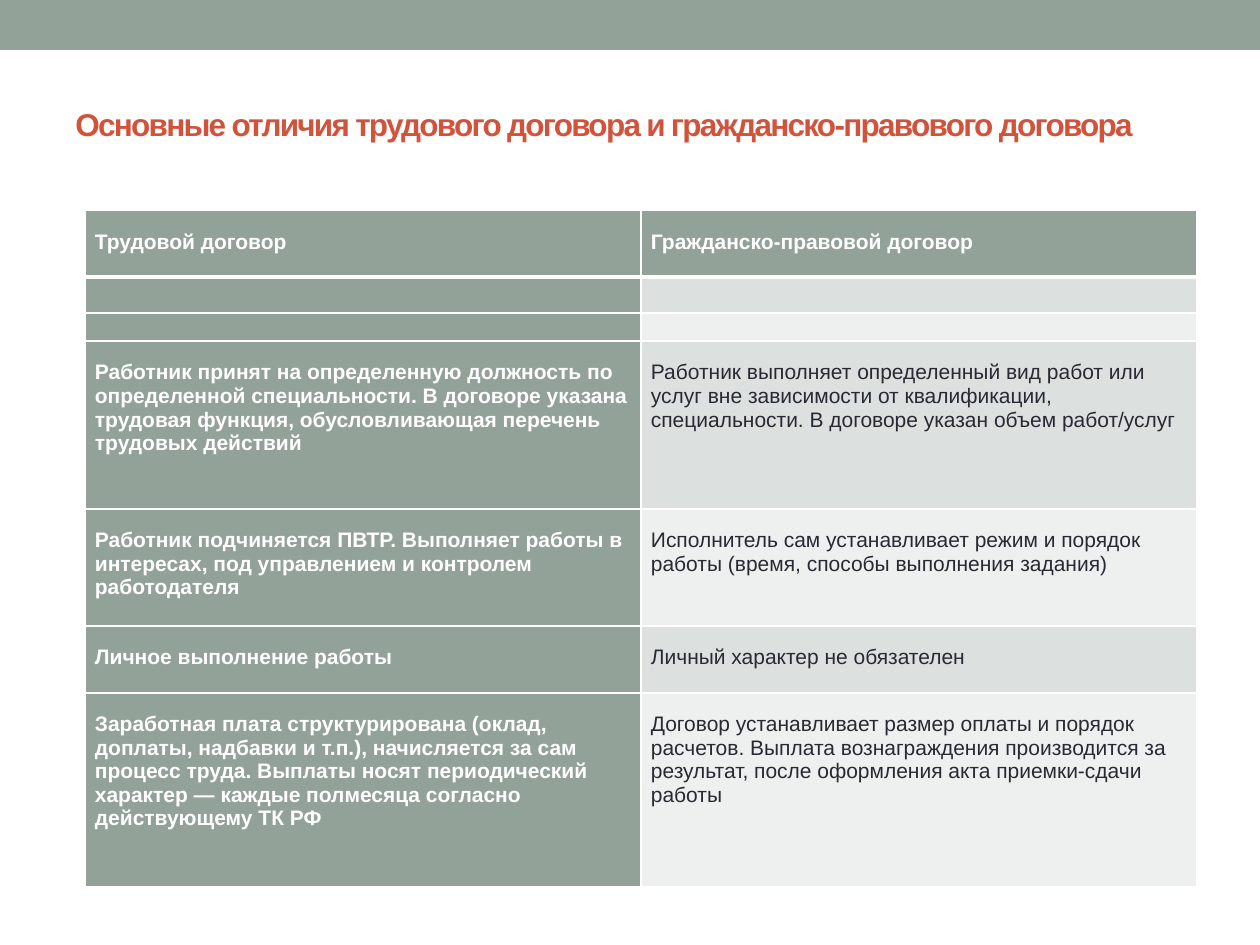
from lxml import etree
from pptx import Presentation
from pptx import util as u
from pptx.dml.color import RGBColor
from pptx.enum import shapes, text
from pptx.oxml import ns

PX = u.Inches(1) // 126
COLORS = {"sage": "93A299", "red": "D2533C", "white": "FFFFFF",
          "ink": "292934", "band_dark": "DCE0DE", "band_light": "EEF0EF"}


def write(frame, words, size=12, color="ink", bold=False, spacing=None):
    frame.word_wrap = True
    paragraph = frame.paragraphs[0]
    paragraph.alignment = text.PP_ALIGN.LEFT
    run = paragraph.add_run()
    run.text = words
    run.font.name = "Arial"
    run.font.size = u.Pt(size)
    run.font.bold = bold
    run.font.color.rgb = RGBColor.from_string(COLORS[color])
    if spacing is not None:
        run.font._element.set("spc", str(spacing * 100))


def add_border(cell, side, points):
    properties = cell._tc.get_or_add_tcPr()
    line = etree.SubElement(properties, ns.qn(f"a:ln{side}"), w=str(u.Pt(points)))
    fill = etree.SubElement(line, ns.qn("a:solidFill"))
    etree.SubElement(fill, ns.qn("a:srgbClr"), val=COLORS["white"])


presentation = Presentation()
presentation.slide_width = 1260 * PX
presentation.slide_height = 945 * PX
slide = presentation.slides.add_slide(presentation.slide_layouts[6])

# Top band
band = slide.shapes.add_shape(shapes.MSO_SHAPE.RECTANGLE, 0, 0, 1260 * PX, 50 * PX)
band.shadow.inherit = False
band.fill.solid()
band.fill.fore_color.rgb = RGBColor.from_string(COLORS["sage"])
band.line.fill.background()

# Title, set slightly above the middle of its box
title = slide.shapes.add_textbox(63 * PX, 73 * PX, 1134 * PX, 136 * PX)
title.text_frame.vertical_anchor = text.MSO_ANCHOR.MIDDLE
title.text_frame.margin_bottom = 40 * PX
write(title.text_frame,
      "Основные отличия трудового договора и гражданско-правового договора",
      size=18, color="red", bold=True, spacing=-1)

# Comparison table: row height, employment contract, civil contract
rows = [
    (67, "Трудовой договор", "Гражданско-правовой договор"),
    (36, "", ""),
    (28, "", ""),
    (168, "Работник принят на определенную должность по определенной специальности. "
          "В договоре указана трудовая функция, обусловливающая перечень трудовых действий",
          "Работник выполняет определенный вид работ или услуг вне зависимости "
          "от квалификации, специальности. В договоре указан объем работ/услуг"),
    (117, "Работник подчиняется ПВТР. Выполняет работы в интересах, "
          "под управлением и контролем работодателя",
          "Исполнитель сам устанавливает режим и порядок работы "
          "(время, способы выполнения задания)"),
    (67, "Личное выполнение работы", "Личный характер не обязателен"),
    (194, "Заработная плата структурирована (оклад, доплаты, надбавки и т.п.), "
          "начисляется за сам процесс труда. Выплаты носят периодический характер — "
          "каждые полмесяца согласно действующему ТК РФ",
          "Договор устанавливает размер оплаты и порядок расчетов. Выплата "
          "вознаграждения производится за результат, после оформления акта "
          "приемки-сдачи работы"),
]
total_height = sum(row[0] for row in rows)
table = slide.shapes.add_table(len(rows), 2, 85 * PX, 210 * PX,
                               1112 * PX, total_height * PX).table
for column in table.columns:
    column.width = 556 * PX

for row_index, (height, *words) in enumerate(rows):
    table.rows[row_index].height = height * PX
    for column_index, content in enumerate(words):
        cell = table.cell(row_index, column_index)
        strong = row_index == 0 or column_index == 0

        # Borders: a heavier rule under the header
        weights = {"L": 1, "R": 1, "T": 3 if row_index == 1 else 1,
                   "B": 3 if row_index == 0 else 1}
        for side, points in weights.items():
            add_border(cell, side, points)

        # Fill
        banding = "band_dark" if row_index % 2 else "band_light"
        cell.fill.solid()
        cell.fill.fore_color.rgb = RGBColor.from_string(
            COLORS["sage" if strong else banding])

        # Text, or a small line height that lets an empty row stay low
        if content:
            cell.margin_left = cell.margin_right = 10 * PX
            cell.margin_top = cell.margin_bottom = 20 * PX
            write(cell.text_frame, content, bold=strong,
                  color="white" if strong else "ink")
        else:
            cell.margin_top = cell.margin_bottom = 0
            etree.SubElement(cell.text_frame.paragraphs[0]._p,
                             ns.qn("a:endParaRPr"), sz="1200")

presentation.save("out.pptx")
